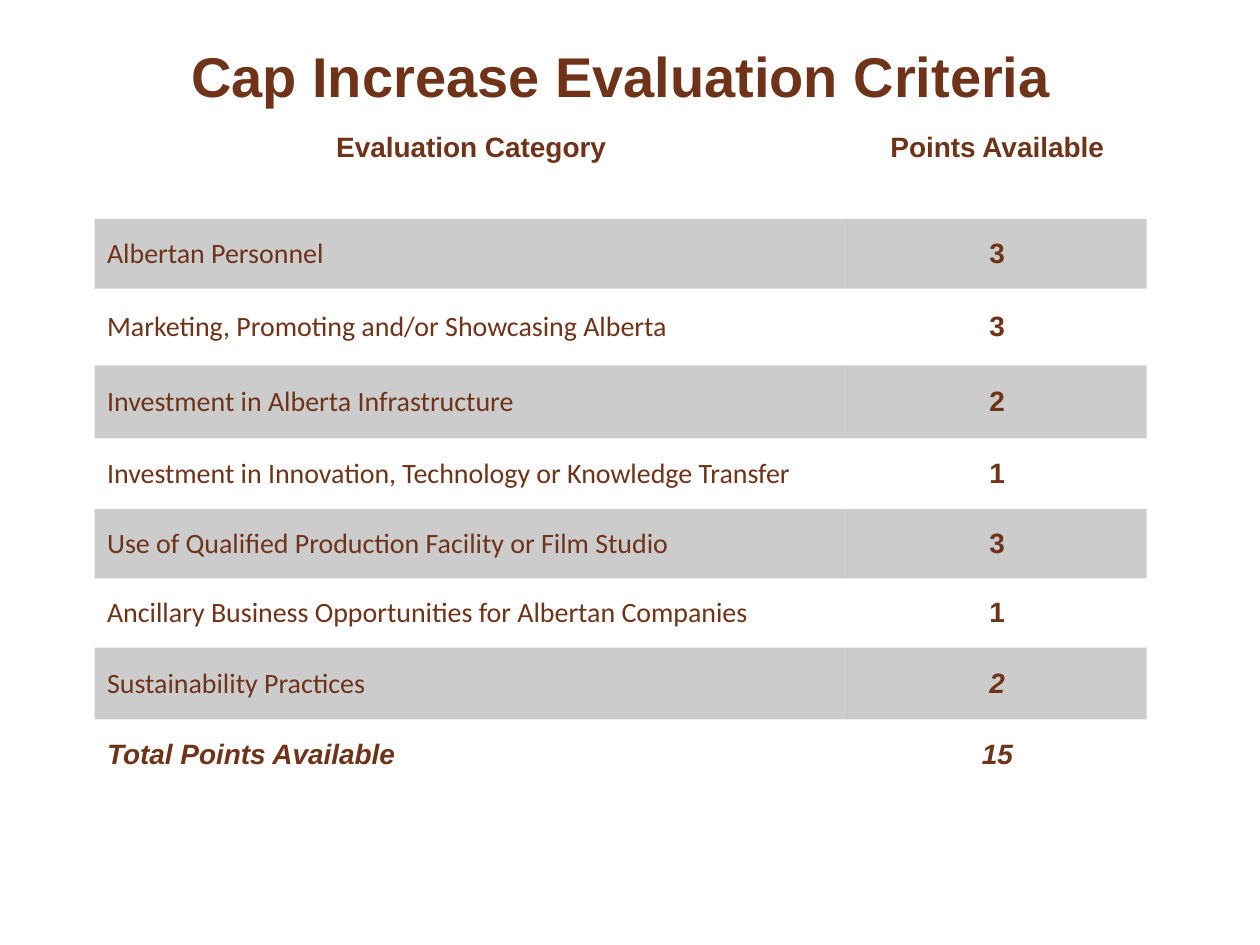
from dataclasses import dataclass

from lxml.etree import SubElement
from pptx import Presentation
from pptx.dml.color import RGBColor
from pptx.enum.text import MSO_ANCHOR, PP_ALIGN
from pptx.oxml.ns import qn
from pptx.util import Inches, Pt


@dataclass(frozen=True)
class Theme:
    ink: RGBColor = RGBColor(0x6E, 0x33, 0x19)
    band: RGBColor = RGBColor(0, 0, 0)
    alpha: int = 20
    head: str = "Arial"
    body: str = "Calibri"
    large: int = 32
    small: int = 16
    grid: str = "{2D5ABB26-0587-4C30-8999-92F81FD0307C}"


class Deck:
    def __init__(self, theme):
        self.theme = theme
        self.file = Presentation()
        self.file.slide_width, self.file.slide_height = Inches(10), Inches(7.5)
        self.slide = self.file.slides.add_slide(self.file.slide_layouts[5])

    def label(self, frame, text, align, **style):
        frame.text = text
        line = frame.paragraphs[0]
        line.alignment = align
        font = line.runs[0].font
        font.color.rgb = self.theme.ink
        values = {"name": self.theme.head, "size": Pt(self.theme.small), "bold": True}
        for key, value in (values | style).items():
            setattr(font, key, value)

    def title(self, text, left, top, width, height):
        shape = self.slide.shapes.title
        shape.left, shape.top = Inches(left), Inches(top)
        shape.width, shape.height = Inches(width), Inches(height)
        shape.text_frame.vertical_anchor = MSO_ANCHOR.TOP
        self.label(shape.text_frame, text, PP_ALIGN.CENTER, size=Pt(self.theme.large))

    def shade(self, cell):
        """Fill a cell with the translucent band colour."""
        cell.fill.solid()
        cell.fill.fore_color.rgb = self.theme.band
        color = cell._tc.tcPr.find(qn("a:solidFill"))[0]
        SubElement(color, qn("a:alpha"), val=str(self.theme.alpha * 1000))

    def table(self, rows, left, top, widths, heights):
        """Draw a header, banded criteria rows and a closing total row."""
        frame = self.slide.shapes.add_table(
            len(rows), len(widths), Inches(left), Inches(top),
            Inches(sum(widths)), Inches(sum(heights)))
        table = frame.table
        table.first_row = table.horz_banding = False
        table._tbl.tblPr.find(qn("a:tableStyleId")).text = self.theme.grid
        for column, width in zip(table.columns, widths):
            column.width = Inches(width)
        last = len(rows) - 1
        for r, (values, height) in enumerate(zip(rows, heights)):
            table.rows[r].height = Inches(height)
            for c, text in enumerate(values):
                cell = table.cell(r, c)
                cell.vertical_anchor = MSO_ANCHOR.MIDDLE if r else MSO_ANCHOR.TOP
                plain = c == 0 and 0 < r < last
                align = PP_ALIGN.LEFT if c == 0 and r else PP_ALIGN.CENTER
                self.label(
                    cell.text_frame, text, align, bold=not plain,
                    name=self.theme.body if plain else self.theme.head,
                    italic=r == last or (r == last - 1 and c == 1))
                if r % 2:
                    self.shade(cell)
                else:
                    cell.fill.background()


ROWS = [
    ("Evaluation Category", "Points Available"),
    ("Albertan Personnel", "3"),
    ("Marketing, Promoting and/or Showcasing Alberta", "3"),
    ("Investment in Alberta Infrastructure", "2"),
    ("Investment in Innovation, Technology or Knowledge Transfer", "1"),
    ("Use of Qualified Production Facility or Film Studio", "3"),
    ("Ancillary Business Opportunities for Albertan Companies", "1"),
    ("Sustainability Practices", "2"),
    ("Total Points Available", "15"),
]


def main():
    deck = Deck(Theme())
    deck.title("Cap Increase Evaluation Criteria", 0.43, 0.28, 9, 0.8)
    deck.table(ROWS, 0.75, 1, (5.98, 2.37),
               (0.74, 0.55, 0.61, 0.58, 0.56, 0.55, 0.55, 0.57, 0.57))
    deck.file.save("out.pptx")


if __name__ == "__main__":
    main()
